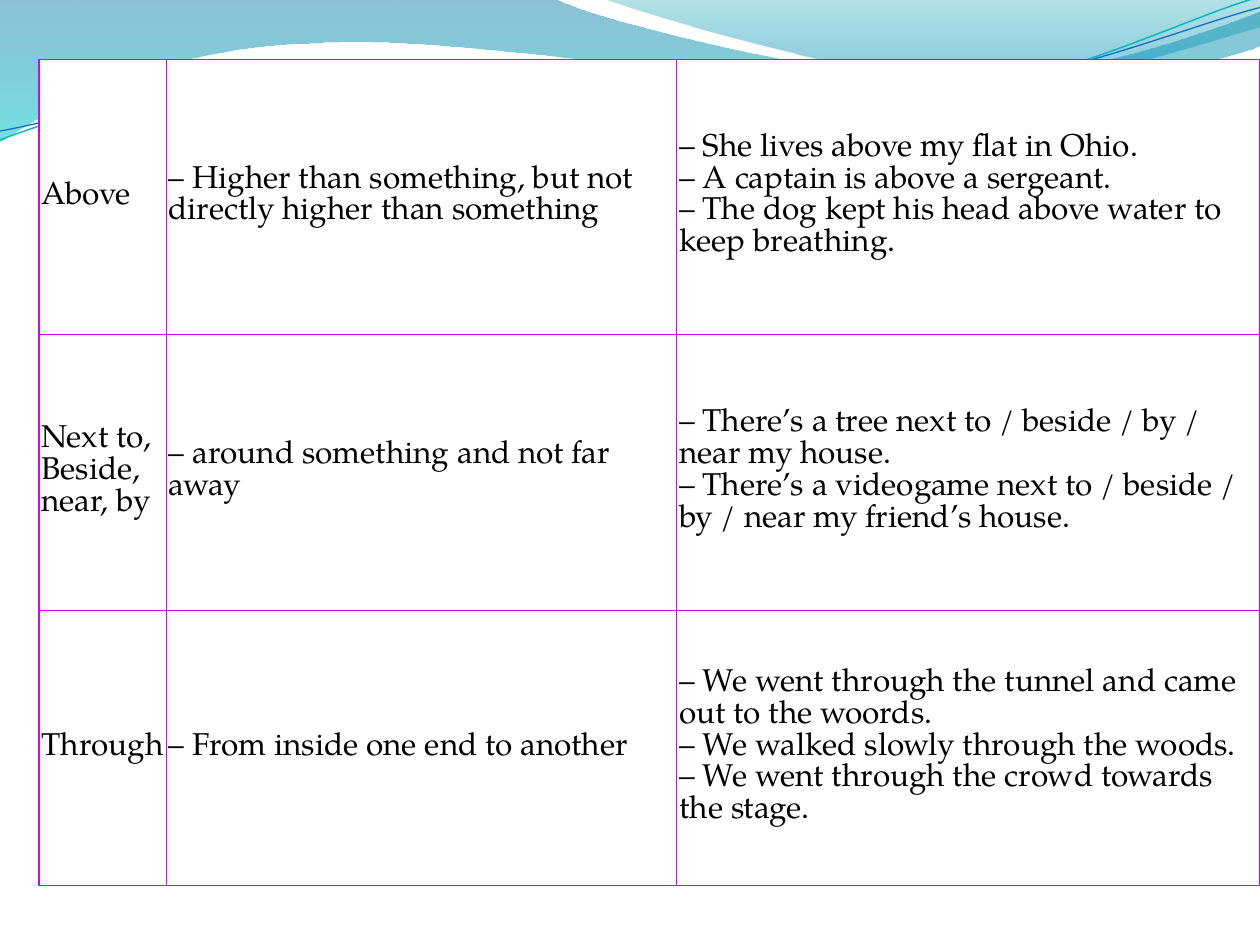
from math import cos, radians, sin

from lxml.etree import SubElement
from pptx import Presentation
from pptx.dml.color import RGBColor
from pptx.enum.text import MSO_ANCHOR
from pptx.oxml import parse_xml
from pptx.oxml.ns import nsdecls, qn
from pptx.util import Inches, Pt

COLUMNS, ROWS = 10, 7.5
FONT = "TeX Gyre Pagella"

LEFT_WAVE = [
    (0, 0), (4.4, -0.01), (4.76, 0.17, 6.64, 0.63, 7.58, 0.63),
    (8.53, 0.63, 9.58, 0.26, 10, 0.09), (10.01, 0.36),
    (9.83, 0.44, 8.7, 0.76, 7.46, 0.75), (6.22, 0.75, 3.82, 0.28, 2.57, 0.34),
    (1.29, 0.36, 0.46, 0.83, -0.01, 1.13), (0, 0),
]
RIGHT_WAVE = [
    (4.79, -0.01), (5.09, 0.11, 6.82, 0.62, 7.69, 0.65),
    (8.56, 0.69, 9.61, 0.32, 10, 0.21), (10, 0), (4.79, -0.01),
]
TEAL_STRAND = [
    (0, 1.11), (0.48, 0.93, 1.58, 0.57, 2.77, 0.52),
    (3.95, 0.47, 5.93, 0.89, 7.13, 0.8), (8.33, 0.71, 9.38, 0.15, 9.98, -0.02),
]
BLUE_STRAND = [
    (0, 1.04), (0.47, 0.96, 1.64, 0.61, 2.83, 0.56),
    (4.03, 0.51, 5.97, 0.84, 7.17, 0.75), (8.36, 0.67, 9.41, 0.21, 10, 0.06),
]
PREPOSITIONS = [
    ("Above",
     "– Higher than something, but not directly higher than something",
     "– She lives above my flat in Ohio.\n– A captain is above a sergeant.\n"
     "– The dog kept his head above water to keep breathing."),
    ("Next to, Beside, near, by",
     "– around something and not far away",
     "– There’s a tree next to / beside / by / near my house.\n"
     "– There’s a videogame next to / beside / by / near my friend’s house."),
    ("Through",
     "– From inside one end to another",
     "– We went through the tunnel and came out to the woords.\n"
     "– We walked slowly through the woods.\n"
     "– We went through the crowd towards the stage."),
]


def color(code):
    return RGBColor.from_string(code)


def write(paragraph, text, size=18, ink="000000", font=FONT):
    for number, line in enumerate(text.split("\n")):
        if number:
            paragraph.add_line_break()
        span = paragraph.add_run()
        span.text = line
        span.font.size = Pt(size)
        span.font.name = font
        span.font.color.rgb = color(ink)


def turn(step, center, angle):
    x0, y0 = center
    c, s = cos(radians(angle)), sin(radians(angle))
    turned = []
    for x, y in zip(step[::2], step[1::2]):
        turned += [x0 + (x - x0) * c - (y - y0) * s,
                   y0 + (x - x0) * s + (y - y0) * c]
    return tuple(turned)


class SlideBuilder:
    border = "D004F5"
    border_width = 0.75
    inset = 0.02
    cell_fill = "FFFFFF"

    def __init__(self, deck):
        self.slide = deck.slides.add_slide(deck.slide_layouts[6])
        self.unit = deck.slide_width / COLUMNS

    def grid(self, count):
        return round(count * self.unit)

    def outline(self, steps, close):
        places = [(self.grid(x), self.grid(y))
                  for step in steps for x, y in zip(step[::2], step[1::2])]
        builder = self.slide.shapes.build_freeform(*places[0], scale=1.0)
        builder.add_line_segments(places[1:], close=close)
        shape = builder.convert_to_shape()
        shape.shadow.inherit = False
        lines = iter(list(shape.element.iter(qn("a:lnTo"))))
        for step in steps[1:]:
            first = next(lines)
            if len(step) == 6:
                curve = parse_xml(f'<a:cubicBezTo {nsdecls("a")}/>')
                first.addprevious(curve)
                for line in (first, next(lines), next(lines)):
                    curve.append(line[0])
                    line.getparent().remove(line)
        return shape

    def wave(self, steps, stops):
        shape = self.outline(steps, True)
        shape.line.fill.background()
        shape.fill.gradient()
        shape.fill.gradient_angle = 270
        for stop, (position, code, _) in zip(shape.fill.gradient_stops, stops):
            stop.position = position
            stop.color.rgb = color(code)
        for tag, (_, _, opacity) in zip(shape.element.spPr.iter(qn("a:srgbClr")), stops):
            SubElement(tag, qn("a:alpha"), val=str(opacity * 1000))

    def strand(self, steps, center, code, width, tilt=-2.7):
        shape = self.outline([turn(step, center, -tilt) for step in steps], False)
        shape.rotation = tilt
        shape.fill.background()
        shape.line.color.rgb = color(code)
        shape.line.width = Pt(width)

    def table(self, left, top, widths, height, rows):
        frame = self.slide.shapes.add_table(
            len(rows), len(widths), self.grid(left), self.grid(top),
            self.grid(sum(widths)), self.grid(height))
        table = frame.table
        table.first_row = table.horz_banding = False
        for column, width in zip(table.columns, widths):
            column.width = self.grid(width)
        for row, texts in zip(table.rows, rows):
            row.height = self.grid(height / len(rows))
            for cell, text in zip(row.cells, texts):
                self.cell(cell, text)

    def cell(self, cell, text):
        cell.fill.solid()
        cell.fill.fore_color.rgb = color(self.cell_fill)
        cell.vertical_anchor = MSO_ANCHOR.MIDDLE
        cell.margin_left = cell.margin_right = self.grid(self.inset)
        cell.margin_top = cell.margin_bottom = self.grid(self.inset)
        write(cell.text_frame.paragraphs[0], text)
        properties = cell._tc.get_or_add_tcPr()
        for index, side in enumerate("LRTB"):
            properties.insert(index, parse_xml(
                f'<a:ln{side} {nsdecls("a")} w="{Pt(self.border_width)}"><a:solidFill>'
                f'<a:srgbClr val="{self.border}"/></a:solidFill></a:ln{side}>'))


def main():
    deck = Presentation()
    deck.slide_width, deck.slide_height = Inches(COLUMNS), Inches(ROWS)
    page = SlideBuilder(deck)
    page.wave(LEFT_WAVE, [(0, "0074A1", 45), (1, "00C6CF", 55)])
    page.wave(RIGHT_WAVE, [(0, "00A1A9", 30), (0.8, "008BBF", 45)])
    page.strand(TEAL_STRAND, (4.99, 0.58), "0AB8BF", 0.85)
    page.strand(BLUE_STRAND, (5, 0.59), "0F6FC6", 0.75)
    page.table(0.31, 0.47, [1.01, 4.05, 4.63], 6.56, PREPOSITIONS)
    deck.save("out.pptx")


if __name__ == "__main__":
    main()
